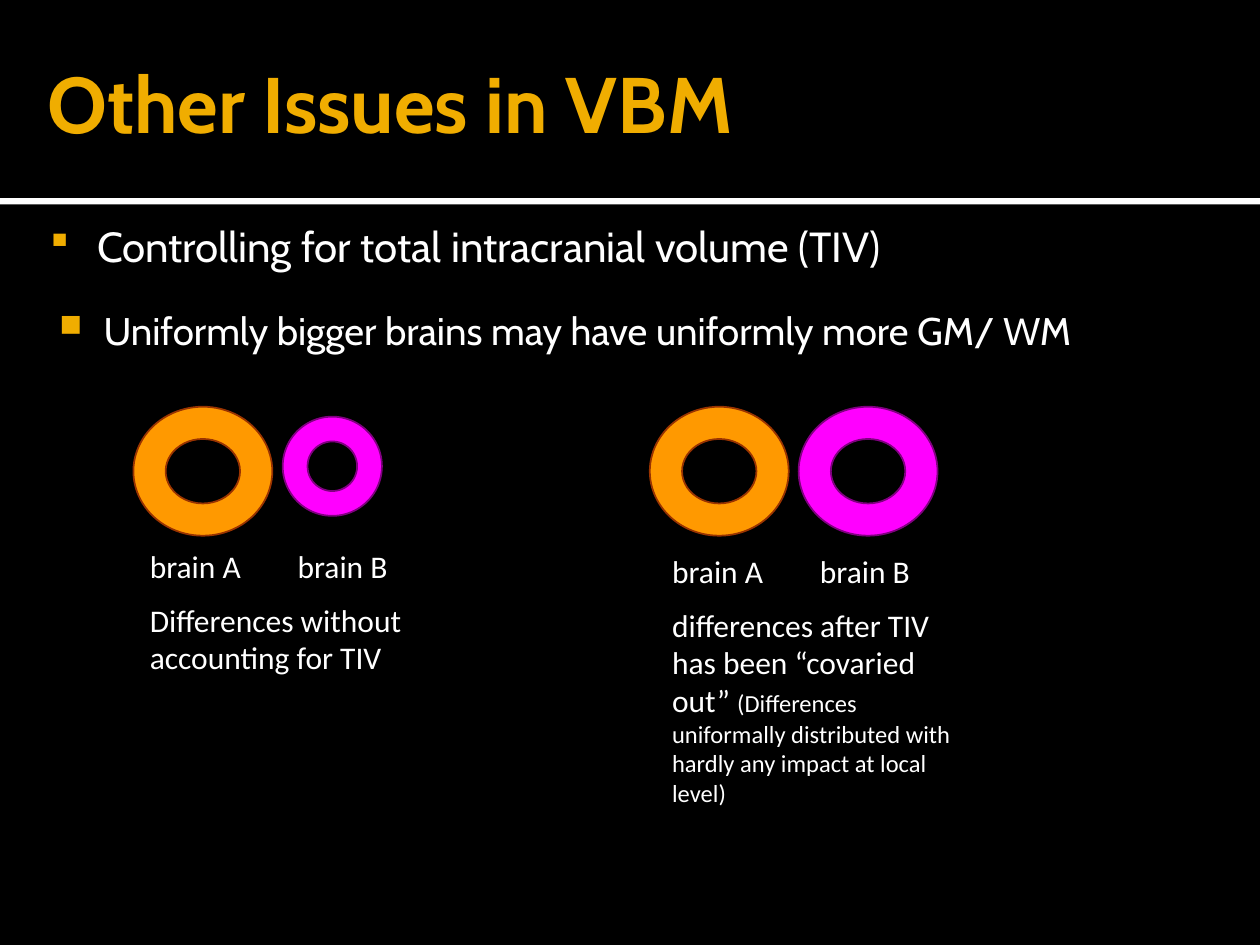
from lxml.etree import SubElement
from pptx import Presentation
from pptx.dml.color import RGBColor as Rgb
from pptx.enum.shapes import MSO_SHAPE as Shape
from pptx.enum.text import MSO_ANCHOR as Anchor
from pptx.oxml.ns import qn
from pptx.util import Cm, Pt

COLORS = {
    "black": "000000",
    "white": "FFFFFF",
    "gold": "F0AD00",
    "orange": "FF9900",
    "brown": "993300",
    "magenta": "FF00FF",
    "purple": "800080",
}


class SlideBuilder:
    """Holds the style and the current slide, and draws each kind of element."""

    heading_font = "Cabin"
    caption_font = "Calibri"
    bullet_font = "Wingdings"

    def __init__(self, slide):
        self.slide = slide
        fill = slide.background.fill
        fill.solid()
        fill.fore_color.rgb = self.color("black")

    def color(self, name):
        return Rgb.from_string(COLORS[name])

    def shape(self, kind, box, fill, line=None):
        shape = self.slide.shapes.add_shape(kind, *map(Cm, box))
        shape.shadow.inherit = False
        shape.fill.solid()
        shape.fill.fore_color.rgb = self.color(fill)
        if line:
            shape.line.color.rgb = self.color(line)
            shape.line.width = Pt(1)
        else:
            shape.line.fill.background()
        return shape

    def band(self, top, height, fill):
        self.shape(Shape.RECTANGLE, (0, top, 25.4, height), fill)

    def ring(self, box, fill, line):
        self.shape(Shape.DONUT, box, fill, line).adjustments[0] = 0.25

    def text_frame(self, box, insets=(0.25, 0.13, 0.25, 0.13)):
        frame = self.slide.shapes.add_textbox(*map(Cm, box)).text_frame
        frame.word_wrap = True
        frame.margin_left, frame.margin_top, frame.margin_right, frame.margin_bottom = map(Cm, insets)
        return frame

    def style(self, paragraph, font, size, color, bold=False):
        paragraph.font.name = font
        paragraph.font.size = Pt(size)
        paragraph.font.bold = bold
        paragraph.font.color.rgb = self.color(color)

    def title(self, text, box):
        frame = self.text_frame(box, insets=(0.25, 0.13, 0.13, 0.13))
        frame.vertical_anchor = Anchor.MIDDLE
        heading = frame.paragraphs[0]
        heading.text = text
        self.style(heading, self.heading_font, 45, "gold", bold=True)

    def bullet(self, text, box, size, mark, margin, hanging, mark_size=100, **frame_options):
        point = self.text_frame(box, **frame_options).paragraphs[0]
        point.text = text
        props = point._p.get_or_add_pPr()
        props.set("marL", str(Cm(margin)))
        props.set("indent", str(-Cm(hanging)))
        mark_color = SubElement(props, qn("a:buClr"))
        SubElement(mark_color, qn("a:srgbClr"), val=COLORS["gold"])
        SubElement(props, qn("a:buSzPct"), val=str(mark_size * 1000))
        SubElement(props, qn("a:buFont"), typeface=self.bullet_font, charset="2")
        SubElement(props, qn("a:buChar"), char=mark)
        self.style(point, self.heading_font, size, "white")

    def caption(self, box, text, remark=None):
        frame = self.text_frame(box)
        names, explanation = frame.paragraphs[0], frame.add_paragraph()
        names.text = "brain A\tbrain B"
        stops = SubElement(names._p.get_or_add_pPr(), qn("a:tabLst"))
        SubElement(stops, qn("a:tab"), pos=str(Cm(2.98)), algn="l")
        explanation.text = text
        explanation.space_before = Pt(9)
        for paragraph in (names, explanation):
            self.style(paragraph, self.caption_font, 18, "white")
        if remark:
            aside = explanation.add_run()
            aside.text = remark
            aside.font.size = Pt(14)


def main():
    deck = Presentation()
    deck.slide_width, deck.slide_height = Cm(25.4), Cm(19.05)
    page = SlideBuilder(deck.slides.add_slide(deck.slide_layouts[6]))

    page.band(3.99, 0.13, "white")
    page.band(0, 3.99, "black")
    page.title("Other Issues in VBM", (0.71, 0.32, 22.86, 3.48))
    page.bullet("Controlling for total intracranial volume (TIV)",
                (0.76, 4.32, 19.81, 2.13), 24, "§", 0.95, 0.95)
    page.bullet("Uniformly bigger brains may have uniformly more GM/ WM",
                (0.72, 5.93, 23.57, 11.2), 22, "n", 1.22, 0.89, mark_size=80,
                insets=(0.15, 0.25, 0.25, 0.13))

    brain_a, brain_b = ("orange", "brown"), ("magenta", "purple")
    large = 2.8, 2.6
    for left, top, size, colors in (
        (2.69, 8.2, large, brain_a),
        (13.1, 8.2, large, brain_a),
        (16.1, 8.2, large, brain_b),
        (5.7, 8.4, (2, 2), brain_b),
    ):
        page.ring((left, top, *size), *colors)

    page.caption((2.77, 10.9, 6.2, 5.64), "Differences without accounting for TIV")
    page.caption((13.3, 11, 6.2, 5.51), "differences after TIV has been “covaried out” ",
                 "(Differences uniformally distributed with hardly any impact at local level)")
    deck.save("out.pptx")


if __name__ == "__main__":
    main()
